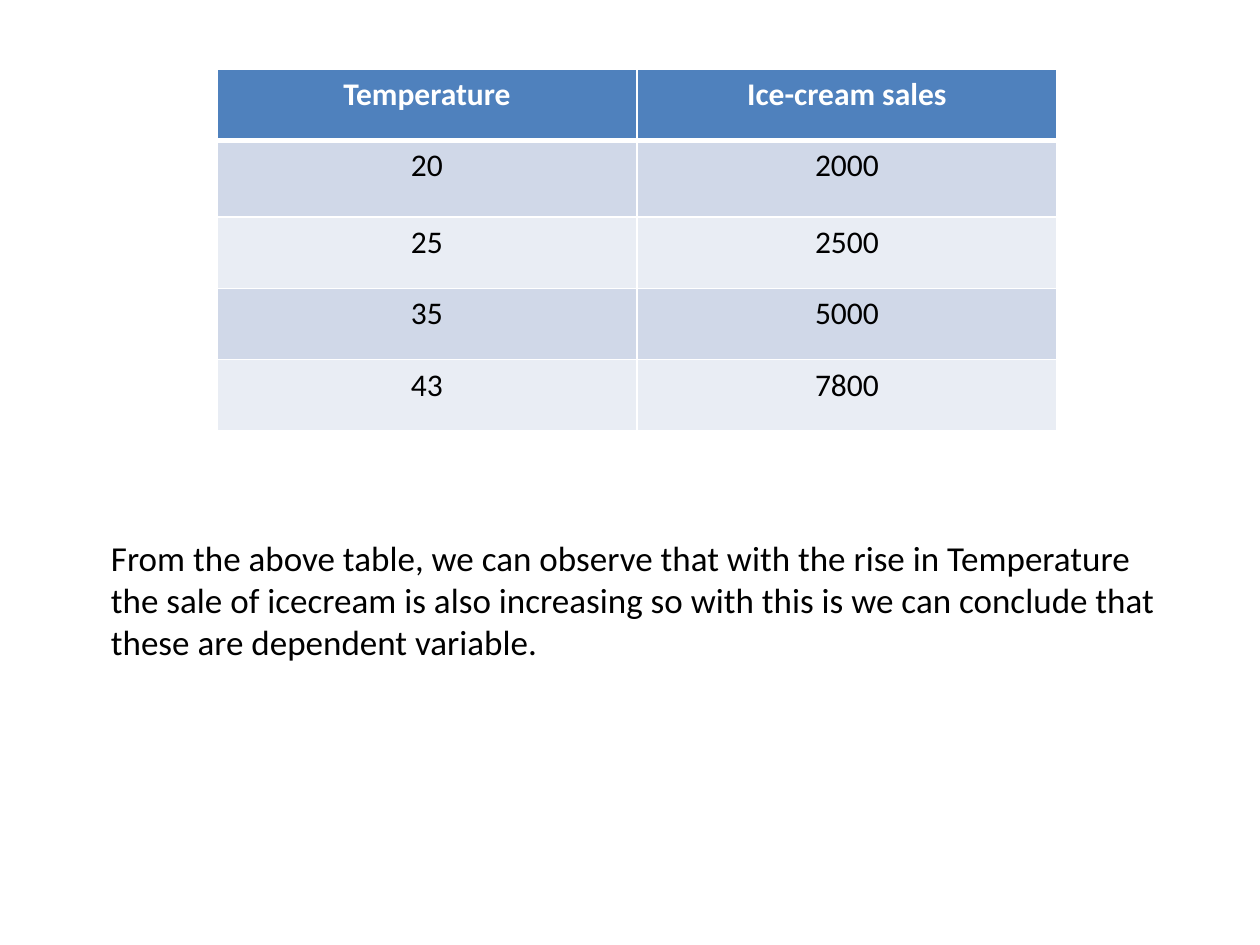
from lxml import etree
from pptx import Presentation
from pptx.dml.color import RGBColor
from pptx.enum.text import MSO_ANCHOR, PP_ALIGN
from pptx.oxml.ns import qn
from pptx.util import Pt

CENTER = PP_ALIGN.CENTER
BOTTOM = MSO_ANCHOR.BOTTOM
SECTION_HEADER_LAYOUT = 2
FONT = "Calibri"
COLORS = {
    "header": "4F81BD",
    "odd_row": "D0D8E8",
    "even_row": "E9EDF4",
    "white": "FFFFFF",
    "text": "000000",
}
SALES_ROWS = [
    ("Temperature", "Ice-cream sales"),
    ("20", "2000"),
    ("25", "2500"),
    ("35", "5000"),
    ("43", "7800"),
]
ROW_HEIGHTS = [40.8, 43.6, 40.8, 40.8, 40.8]
COLUMN_WIDTH = 240
CONCLUSION = (
    "From the above table, we can observe that with the rise in Temperature "
    "the sale of icecream is also increasing so with this is we can conclude "
    "that these are dependent variable."
)


def rgb(name):
    return RGBColor.from_string(COLORS[name])


def format_text(paragraph, size, color, bold=False):
    for run in paragraph.runs:
        run.font.name = FONT
        run.font.size = Pt(size)
        run.font.bold = bold
        run.font.color.rgb = rgb(color)


def set_borders(cell, top, bottom):
    """Draw white borders, with the widths of top and bottom in points."""
    properties = cell._tc.get_or_add_tcPr()
    widths = {"a:lnL": 1, "a:lnR": 1, "a:lnT": top, "a:lnB": bottom}
    for index, (side, width) in enumerate(widths.items()):
        border = etree.Element(qn(side), w=str(Pt(width)))
        fill = etree.SubElement(border, qn("a:solidFill"))
        etree.SubElement(fill, qn("a:srgbClr"), val=COLORS["white"])
        properties.insert(index, border)


def format_cell(cell, row_index):
    is_header = row_index == 0
    band = "odd_row" if row_index % 2 else "even_row"
    cell.fill.solid()
    cell.fill.fore_color.rgb = rgb("header" if is_header else band)
    set_borders(cell, top=3 if row_index == 1 else 1, bottom=3 if is_header else 1)
    paragraph = cell.text_frame.paragraphs[0]
    paragraph.alignment = CENTER
    format_text(paragraph, 18, "white" if is_header else "text", is_header)


def add_sales_table(slide):
    column_count = len(SALES_ROWS[0])
    table = slide.shapes.add_table(
        len(SALES_ROWS), column_count, Pt(124), Pt(39.6),
        Pt(COLUMN_WIDTH * column_count), Pt(sum(ROW_HEIGHTS)),
    ).table
    for column in table.columns:
        column.width = Pt(COLUMN_WIDTH)
    for row_index, (values, height) in enumerate(zip(SALES_ROWS, ROW_HEIGHTS)):
        table.rows[row_index].height = Pt(height)
        for column_index, value in enumerate(values):
            cell = table.cell(row_index, column_index)
            cell.text_frame.text = value
            format_cell(cell, row_index)


def fill_conclusion(body):
    body.left, body.top = Pt(56.2), Pt(303.8)
    body.width, body.height = Pt(612), Pt(78.5)
    frame = body.text_frame
    frame.word_wrap = True
    frame.vertical_anchor = BOTTOM
    frame.text = CONCLUSION
    paragraph = frame.paragraphs[0]
    paragraph.space_before = Pt(0)
    format_text(paragraph, 20, "text")


def main():
    presentation = Presentation()
    presentation.slide_width, presentation.slide_height = Pt(720), Pt(540)
    layout = presentation.slide_layouts[SECTION_HEADER_LAYOUT]
    slide = presentation.slides.add_slide(layout)
    empty_title = slide.shapes.title.element
    empty_title.getparent().remove(empty_title)
    add_sales_table(slide)
    fill_conclusion(slide.placeholders[1])
    presentation.save("out.pptx")


if __name__ == "__main__":
    main()
